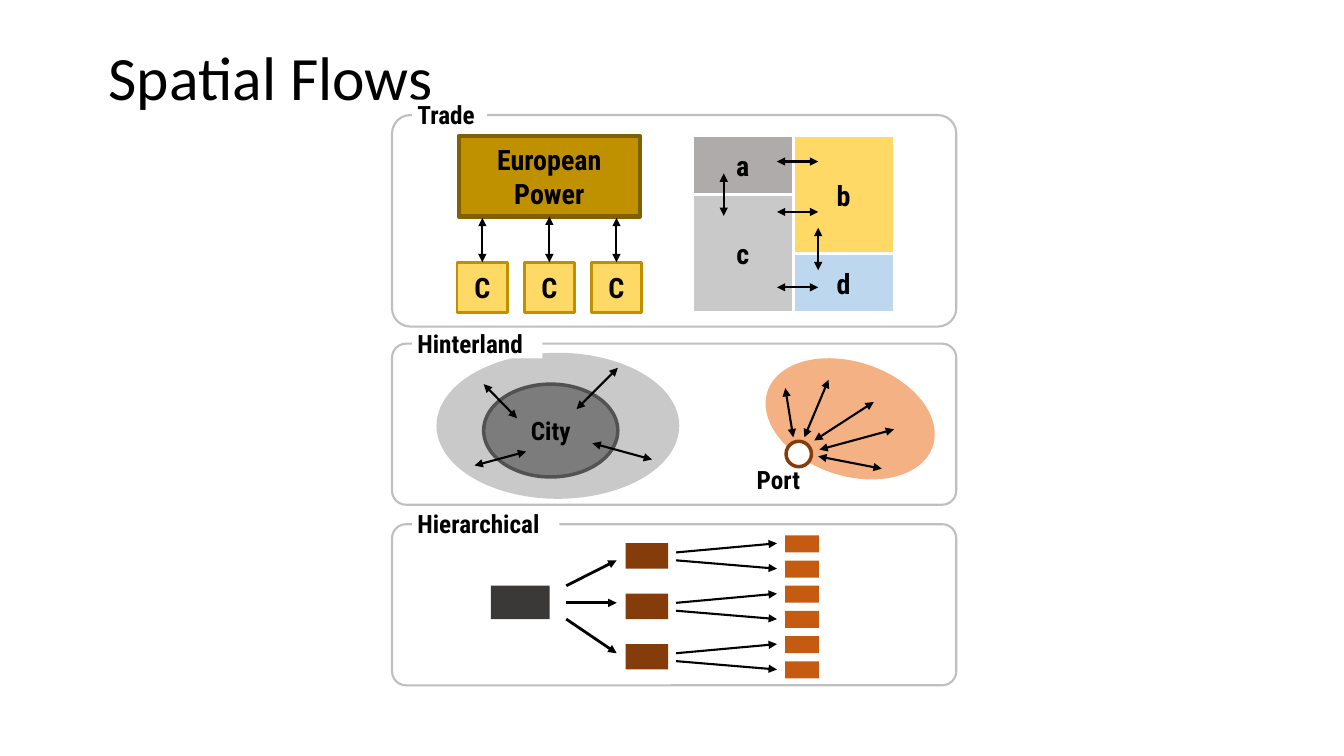
from dataclasses import dataclass
from typing import Any

from lxml import etree
from pptx import Presentation
from pptx.dml.color import RGBColor
from pptx.enum import shapes, text
from pptx.oxml import ns
from pptx.util import Cm, Pt

COLORS = {
    "black": "000000", "white": "FFFFFF", "frame": "BFBFBF",
    "gold": "BF9000", "dark gold": "806000", "yellow": "FFD966",
    "gray": "AFABAB", "light gray": "C9C9C9", "blue": "BDD7EE",
    "city": "7C7C7C", "city edge": "525252", "peach": "F4B183",
    "brown": "843C0B", "orange": "C55A11", "charcoal": "3B3838",
}
RECT = shapes.MSO_SHAPE.RECTANGLE
OVAL = shapes.MSO_SHAPE.OVAL
ROUNDED = shapes.MSO_SHAPE.ROUNDED_RECTANGLE


def rgb(name):
    return RGBColor.from_string(COLORS[name])


def write(box, words, size=20, font="Roboto Condensed", bold=True, align="LEFT",
          anchor="TOP", wrap=False, grow=False, spacing=None, margins=None):
    frame = box.text_frame
    frame.word_wrap = wrap
    frame.vertical_anchor = getattr(text.MSO_ANCHOR, anchor)
    if grow:
        frame.auto_size = text.MSO_AUTO_SIZE.SHAPE_TO_FIT_TEXT
    if margins:
        side, end = margins
        frame.margin_left = frame.margin_right = Cm(side)
        frame.margin_top = frame.margin_bottom = Cm(end)
    for index, line in enumerate(words.split("\n")):
        para = frame.add_paragraph() if index else frame.paragraphs[0]
        para.alignment = getattr(text.PP_ALIGN, align)
        para.line_spacing = spacing
        span = para.add_run()
        span.text = line
        span.font.name, span.font.size, span.font.bold = font, Pt(size), bold
        span.font.color.rgb = rgb("black")


@dataclass
class Region:
    """An area of the page; its parts are placed in cm from its top left corner."""
    page: Any
    left: float
    top: float
    width: float
    height: float

    def place(self, x, y):
        return Cm(self.left + x), Cm(self.top + y)

    def shape(self, kind, x, y, width, height, fill=None, edge=None, weight=2,
              words=None, **style):
        box = self.page.shapes.add_shape(kind, *self.place(x, y), Cm(width), Cm(height))
        box.shadow.inherit = False
        if fill:
            box.fill.solid()
            box.fill.fore_color.rgb = rgb(fill)
        else:
            box.fill.background()
        if edge:
            box.line.color.rgb = rgb(edge)
            box.line.width = Pt(weight)
        else:
            box.line.fill.background()
        if words:
            write(box, words, **{"align": "CENTER", "anchor": "MIDDLE", **style})
        return box

    def textbox(self, words, x, y, width, height, **style):
        box = self.page.shapes.add_textbox(*self.place(x, y), Cm(width), Cm(height))
        write(box, words, **style)

    def arrow(self, x1, y1, x2, y2, weight=1.5, both=True):
        arrow = self.page.shapes.add_connector(
            shapes.MSO_CONNECTOR.STRAIGHT, *self.place(x1, y1), *self.place(x2, y2))
        arrow.line.color.rgb = rgb("black")
        arrow.line.width = Pt(weight)
        properties = arrow._element.spPr
        outline = properties.find(ns.qn("a:ln"))
        for end in ("a:headEnd", "a:tailEnd") if both else ("a:tailEnd",):
            etree.SubElement(outline, ns.qn(end), type="triangle")
        etree.SubElement(properties, ns.qn("a:effectLst"))
        return arrow

    def frame(self, label, label_width):
        """Outline the region and set its label over the top edge."""
        outline = self.shape(ROUNDED, 0, 0, self.width, self.height,
                             edge="frame", weight=1.5)
        outline.adjustments[0] = 0.087
        self.shape(RECT, 0.51, -0.39, label_width, 0.76, fill="white", words=label,
                   size=18, align="LEFT", anchor="TOP", grow=True, margins=(0.13, 0))


def draw_title(region):
    region.textbox("Spatial Flows", 0, 0, region.width, region.height, size=44,
                   font="Calibri", bold=False, anchor="MIDDLE", wrap=True, spacing=0.9)


def draw_trade(region):
    power = region.shape(RECT, 1.68, 0.53, 4.57, 2.03, "gold", "dark gold", 3,
                         "European\nPower")
    side, pitch = 1.27, 1.69
    for index in range(3):
        x = 1.64 + index * pitch
        colony = region.shape(RECT, x, 3.71, side, side, "yellow", "gold", words="C")
        middle = x + side / 2
        arrow = region.arrow(middle, 2.59, middle, 3.71)
        if index == 1:
            arrow.begin_connect(power, 2)
        arrow.end_connect(colony, 0)

    unit, column = 1.48, 2.54
    for name, col, start, units, fill in (
            ("a", 0, 0, 1, "gray"), ("b", 1, 0, 2, "yellow"),
            ("c", 0, 1, 2, "light gray"), ("d", 1, 2, 1, "blue")):
        region.shape(RECT, 7.57 + col * column, 0.53 + start * unit, column,
                     units * unit, fill, "white", words=name)
    for x, y in ((8.36, 1.47), (10.74, 2.84)):
        region.arrow(x, y, x, y + 1.07)
    for y in (1.17, 2.44, 4.34):
        region.arrow(9.7, y, 10.74, y)
    region.frame("Trade", 1.88)


def draw_hinterland(region):
    port_area = region.shape(OVAL, 9.35, 0.46, 4.39, 2.87, "peach")
    port_area.rotation = 18.3
    region.shape(OVAL, 1.12, 0.23, 6.12, 3.68, "light gray")
    region.shape(OVAL, 2.31, 1.02, 3.38, 2.34, "city", "city edge", 2.5, "City", size=18)
    region.shape(OVAL, 9.93, 2.46, 0.64, 0.64, "white", "brown", 2.5)
    region.textbox("Port", 8.94, 2.92, 1.73, 1.02, size=18, grow=True)
    city_flows = ((2.31, 1.02, 3.15, 1.88), (5.05, 2.51, 6.55, 2.92),
                  (2.08, 3.07, 3.38, 2.72), (4.65, 1.65, 5.69, 0.61))
    port_flows = ((10.64, 2.44, 12.14, 1.47), (10.77, 2.67, 12.65, 2.16),
                  (9.91, 1.12, 10.11, 2.36), (11, 0.91, 10.39, 2.36),
                  (10.74, 2.84, 12.34, 3.15))
    for ends in city_flows + port_flows:
        region.arrow(*ends)
    region.frame("Hinterland", 3.28)


def draw_hierarchical(region):
    pitch = 1.27
    region.shape(RECT, 2.49, 1.55, 1.48, 0.84, "charcoal")
    for index in range(3):
        region.shape(RECT, 5.89, 0.48 + index * pitch, 1.07, 0.64, "brown")
    for index in range(6):
        region.shape(RECT, 9.91, 0.28 + index * pitch / 2, 0.85, 0.43, "orange")
    for start, end in ((1.55, 0.91), (1.98, 1.98), (2.39, 3.25)):
        region.arrow(4.39, start, 5.66, end, weight=2, both=False)
    for start, end in ((0.71, 0.48), (0.91, 1.12)):
        for index in range(3):
            shift = index * pitch
            region.arrow(7.16, start + shift, 9.7, end + shift, both=False)
    region.frame("Hierarchical", 3.71)


def main():
    deck = Presentation()
    deck.slide_width, deck.slide_height = Cm(33.87), Cm(19.05)
    page = deck.slides.add_slide(deck.slide_layouts[6])
    draw_title(Region(page, 2.49, 0.2, 29.21, 3.68))
    left, width = 9.88, 14.22
    draw_trade(Region(page, left, 2.9, width, 5.33))
    draw_hinterland(Region(page, left, 8.66, width, 4.06))
    draw_hierarchical(Region(page, left, 13.21, width, 4.06))
    deck.save("out.pptx")


if __name__ == "__main__":
    main()
